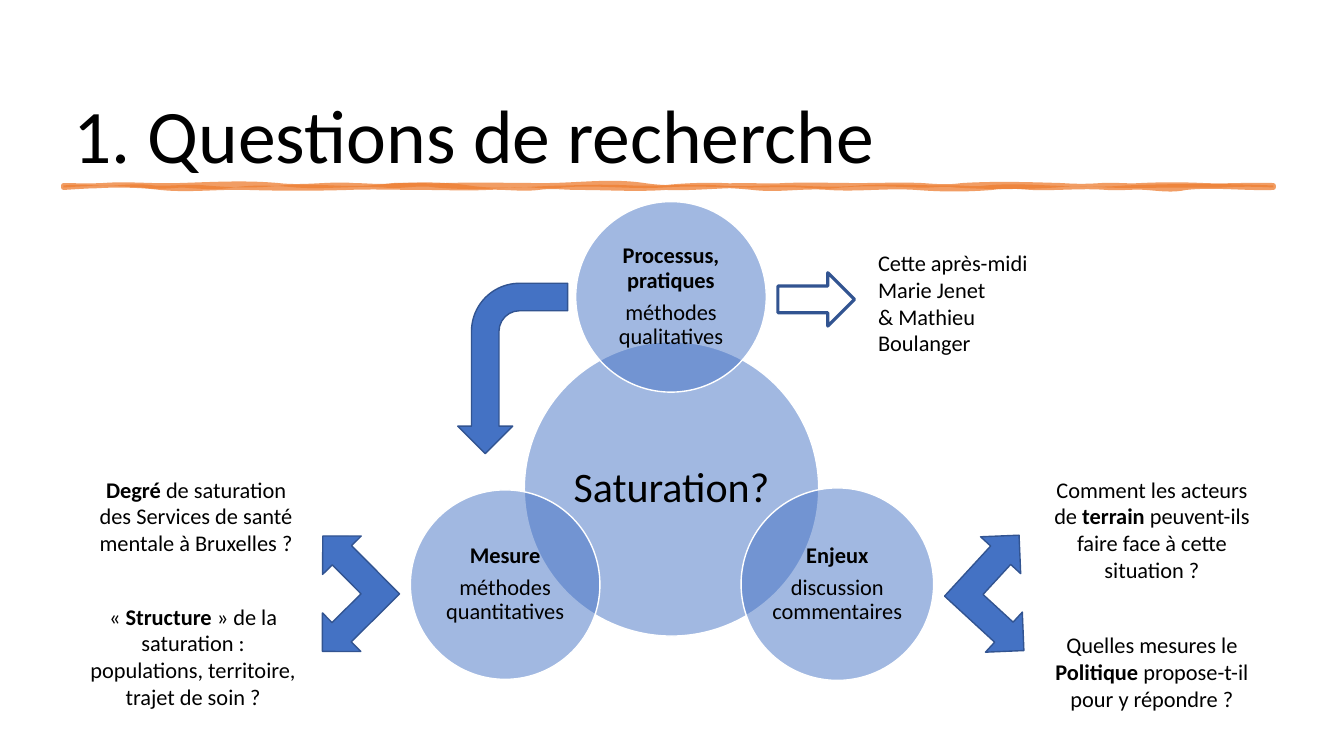
from pptx import Presentation
from pptx import util as u
from pptx.dml import color
from pptx.enum import shapes, text
from pptx.oxml import ns
from lxml import etree

BLUE = color.RGBColor(0x44, 0x72, 0xC4)
NAVY = color.RGBColor(0x32, 0x54, 0x91)
ORANGE = color.RGBColor(0xED, 0x7D, 0x31)
WHITE = color.RGBColor(0xFF, 0xFF, 0xFF)
BLACK = color.RGBColor(0, 0, 0)

KIND = shapes.MSO_SHAPE
LEFT, MID = text.PP_ALIGN.LEFT, text.PP_ALIGN.CENTER
GROW = text.MSO_AUTO_SIZE.SHAPE_TO_FIT_TEXT

TITLE = "1. Questions de recherche"

# left, top, diameter, font size, inset, paragraphs
CIRCLES = [
    (5.2, 3.39, 2.92, 30, 0.04, ["Saturation?"]),
    (5.71, 2, 1.89, 16, 0.02, ["*Processus, pratiques*", "méthodes qualitatives"]),
    (7.35, 4.84, 1.91, 16, 0.02, ["*Enjeux*", "discussion commentaires"]),
    (4.07, 4.86, 1.88, 16, 0.02, ["*Mesure*", "méthodes quantitatives"]),
]

ARROWS = [
    (KIND.LEFT_UP_ARROW, (2.85, 5.35, 1.08, 1.08), 315.2, False, BLUE, 1),
    (KIND.DOWN_ARROW, (7.83, 2.59, 0.53, 0.76), 270, False, None, 2.25),
    (KIND.BENT_ARROW, (4.24, 3.11, 1.69, 1.09), 90, True, BLUE, 1),
    (KIND.LEFT_UP_ARROW, (9.4, 5.35, 1.08, 1.08), 132.6, False, BLUE, 1),
]

NOTES = [
    ((0.82, 4.67, 2.25, 0.91), MID,
     ["*Degré* de saturation des Services de santé mentale à Bruxelles ?"]),
    ((0.79, 5.93, 2.25, 1.45), MID,
     ["« *Structure* » de la saturation : populations, territoire, trajet de soin ?"]),
    ((8.61, 2.42, 2.09, 1.18), LEFT,
     ["Cette après-midi", "Marie Jenet \n& Mathieu Boulanger"]),
    ((10.3, 4.67, 2.25, 1.18), MID,
     ["Comment les acteurs de *terrain* peuvent-ils faire face à cette situation ?"]),
    ((10.3, 6.21, 2.25, 0.91), MID,
     ["Quelles mesures le *Politique *propose-t-il pour y répondre ?"]),
]

START, END, TOP, BASE = 0.63, 12.63, 1.84, 1.86

# end x of each wave, then its two bends in hundredths of an inch
RIM = (
    [(1.02, 0, 1), (1.77, -2, 1), (2.76, -1, -3), (3.51, 3, -2), (3.9, 0, 2),
     (4.41, -1, 1), (5.4, -1, 0), (6.39, 0, -5), (7.38, 5, 0), (7.77, 0, 1),
     (8.52, -1, 0), (9.15, 0, -1), (9.54, 1, 2), (10.53, -2, -1), (10.92, 1, 1),
     (11.31, -1, 1), (11.94, -1, -1), (END, 1, -1)],
    [(11.76, 1, -3), (11.37, 3, 1), (10.98, -1, 1), (10.23, -2, 1), (9.84, -1, -2),
     (9.09, 2, 2), (8.22, -2, 2), (7.47, -2, 3), (6.6, -3, -3), (5.73, 2, 0),
     (5.34, 0, -2), (4.83, 2, -1), (4.2, 1, 0), (3.45, 0, -1), (2.46, 1, 1),
     (1.59, -1, 3), (START, -4, -2)],
)
BODY = (
    [(1.14, -2, 1), (1.53, -1, -2), (2.04, 1, -2), (2.79, 2, 3), (3.66, -3, 2),
     (4.65, -3, -5), (5.64, 5, 0), (6.27, -1, -1), (7.14, 1, -2), (7.89, 2, -1),
     (8.52, 1, 2), (9.39, -2, 0), (9.78, -1, 2), (10.41, -2, -1), (11.16, 1, 2),
     (END, -2, -2)],
    [(12.12, -1, -1), (11.73, 0, 0), (10.98, 0, 1), (10.47, -1, -2), (9.48, 2, 2),
     (9.09, -2, 1), (8.34, -1, -2), (7.95, 2, 1), (7.44, -1, 0), (6.57, 0, -2),
     (5.58, 2, -3), (5.07, 3, -2), (4.32, 2, 2), (3.81, -3, 2), (2.94, -2, 2),
     (2.31, -2, -3), (1.8, 3, 1), (1.41, 1, 2), (START, -2, -2)],
)

deck = Presentation()
deck.slide_width, deck.slide_height = u.Inches(13.33), u.Inches(7.5)
page = deck.slides.add_slide(deck.slide_layouts[6])


def put(item, **look):
    for key, val in look.items():
        setattr(item, key, val)


def paint(part, hue, alpha=None):
    if hue is None:
        part.background()
        return
    part.solid()
    part.fore_color.rgb = hue
    if alpha:
        tint = part.fore_color._xFill.find(ns.qn("a:srgbClr"))
        etree.SubElement(tint, ns.qn("a:alpha"), val=str(alpha * 1000))


def style(shape, fill, line, width=1, alpha=None, edge=None):
    shape.shadow.inherit = False
    paint(shape.fill, fill, alpha)
    paint(shape.line.fill, line, edge)
    shape.line.width = u.Pt(width)


def write(box, paras, size, align=LEFT, anchor=text.MSO_ANCHOR.TOP, inset=None,
          fit=text.MSO_AUTO_SIZE.NONE, **gaps):
    frame = page.shapes.add_textbox(*map(u.Inches, box)).text_frame
    put(frame, word_wrap=True, vertical_anchor=anchor, auto_size=fit)
    if inset is not None:
        for side in ("left", "top", "right", "bottom"):
            setattr(frame, "margin_" + side, u.Inches(inset))
    for n, words in enumerate(paras):
        para = frame.add_paragraph() if n else frame.paragraphs[0]
        put(para, alignment=align, **gaps)
        for row, line in enumerate(words.split("\n")):
            if row:
                para.add_line_break()
            for k, bit in enumerate(line.split("*")):
                if bit:
                    run = para.add_run()
                    run.text = bit
                    put(run.font, name="Calibri", size=u.Pt(size), bold=k % 2 == 1)
                    run.font.color.rgb = BLACK


def step(route, tag, *dots):
    node = etree.SubElement(route, ns.qn("a:" + tag))
    for x, y in dots:
        etree.SubElement(node, ns.qn("a:pt"), x=str(u.Inches(x - START)),
                         y=str(u.Inches(y - TOP)))


def wave(route, bends, x, y):
    for end, one, two in bends:
        third = (end - x) / 3
        step(route, "cubicBezTo", (x + third, y + one / 100),
             (end - third, y + two / 100), (end, y))
        x = end


def band():
    pen = page.shapes.build_freeform(u.Inches(START), u.Inches(TOP))
    pen.add_line_segments([(u.Inches(x), u.Inches(y)) for x, y in
                           ((END, TOP), (END, BASE), (START, BASE))])
    shape = pen.convert_to_shape()
    routes = shape._element.spPr.find(".//" + ns.qn("a:pathLst"))
    size = dict(routes[0].attrib)
    routes.remove(routes[0])
    for (over, under), look in ((RIM, {"fill": "none"}), (BODY, {"stroke": "0"})):
        route = etree.SubElement(routes, ns.qn("a:path"), **size, **look)
        step(route, "moveTo", (START, TOP))
        wave(route, over, START, TOP)
        step(route, "lnTo", (END, BASE))
        wave(route, under, END, BASE)
        step(route, "close")
    return shape


write((0.63, 0.26, 12.05, 1.57), [TITLE], 54,
      anchor=text.MSO_ANCHOR.BOTTOM, line_spacing=0.9)
style(band(), ORANGE, ORANGE, 3.5, 75, 75)

for x, y, wide, size, inset, paras in CIRCLES:
    disc = page.shapes.add_shape(KIND.OVAL, *map(u.Inches, (x, y, wide, wide)))
    style(disc, BLUE, WHITE, alpha=50)
    core = wide / 2 ** 0.5
    gap = (wide - core) / 2
    write((x + gap, y + gap, core, core), paras, size, MID,
          text.MSO_ANCHOR.MIDDLE, inset, line_spacing=0.9,
          space_after=u.Pt(size * 0.35))

for kind, box, turn, flip, fill, width in ARROWS:
    arrow = page.shapes.add_shape(kind, *map(u.Inches, box))
    arrow.rotation = turn
    if flip:
        arrow._element.spPr.xfrm.set("flipV", "1")
    style(arrow, fill, NAVY, width)

for box, align, paras in NOTES:
    write(box, paras, 16, align, fit=GROW)

deck.save("out.pptx")
